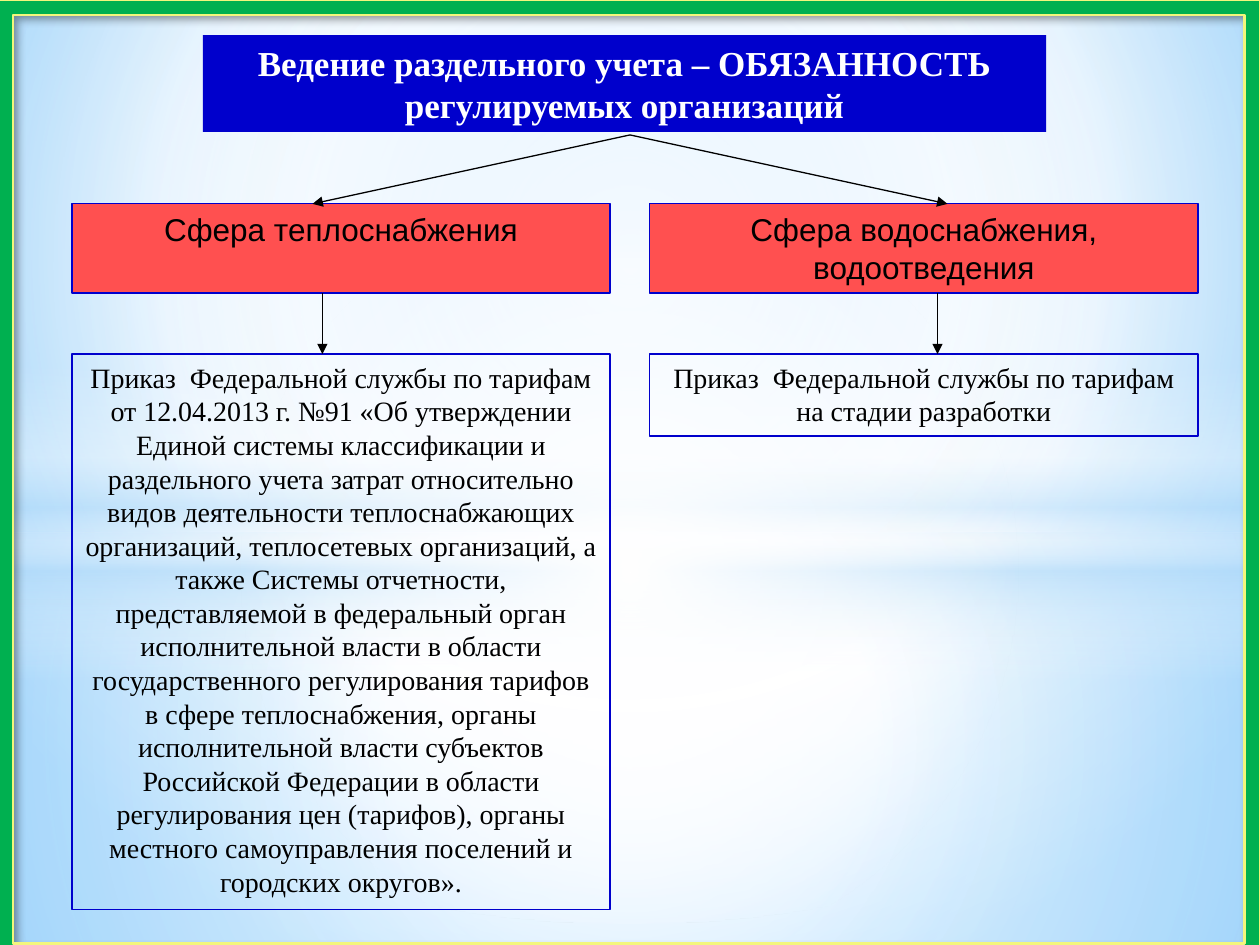
from lxml import etree
from pptx import Presentation
from pptx import util as u
from pptx.dml.color import RGBColor
from pptx.enum import shapes, text
from pptx.oxml import parse_xml
from pptx.oxml.ns import nsdecls, qn

COLORS = {
    "sky": "B4DCFA", "white": "FFFFFF", "black": "000000",
    "pale_blue": "9ED5FF", "deep_blue": "5BB9FF",
    "green": "00B050", "yellow": "F3F67C", "blue": "0000CC", "red": "FF5050",
}
SERIF, SANS = "Times New Roman", "Arial"
WIDTH, HEIGHT = 25.4, 19.05
CENTER = (50, 50, 50, 50)

HEAT_ORDER = (
    "Приказ  Федеральной службы по тарифам от 12.04.2013 г. №91 «Об утверждении "
    "Единой системы классификации и раздельного учета затрат относительно видов "
    "деятельности теплоснабжающих организаций, теплосетевых организаций, а также "
    "Системы отчетности, представляемой в федеральный орган исполнительной власти "
    "в области государственного регулирования тарифов в сфере теплоснабжения, "
    "органы исполнительной власти субъектов Российской Федерации в области "
    "регулирования цен (тарифов), органы местного самоуправления поселений и "
    "городских округов»."
)
WATER_ORDER = "Приказ  Федеральной службы по тарифам\nна стадии разработки"


def rgb(name):
    return RGBColor.from_string(COLORS[name])


def set_gradient(owner, fill, stops, focus=None):
    """Stops are (position, colour, opacity) in percent; no focus means top to bottom."""
    fill.gradient()
    gradient = next(owner.element.iter(qn("a:gradFill")))
    marks = "".join(
        f'<a:gs pos="{place * 1000}"><a:srgbClr val="{COLORS[color]}">'
        f'<a:alpha val="{opacity * 1000}"/></a:srgbClr></a:gs>'
        for place, color, opacity in stops)
    if focus:
        sides = " ".join(f'{side}="{value * 1000}"' for side, value in zip("ltrb", focus))
        shade = f'<a:path path="circle"><a:fillToRect {sides}/></a:path>'
    else:
        shade = '<a:lin ang="5400000" scaled="0"/>'
    gradient.getparent().replace(gradient, parse_xml(
        f'<a:gradFill {nsdecls("a")} rotWithShape="1">'
        f'<a:gsLst>{marks}</a:gsLst>{shade}</a:gradFill>'))


def add_box(page, area, fill=None, line=None, kind=shapes.MSO_SHAPE.RECTANGLE, weight=0.75):
    box = page.shapes.add_shape(kind, *(u.Cm(length) for length in area))
    box.shadow.inherit = False
    if fill:
        box.fill.solid()
        box.fill.fore_color.rgb = rgb(fill)
    else:
        box.fill.background()
    if line:
        box.line.color.rgb = rgb(line)
        box.line.width = u.Pt(weight)
    else:
        box.line.fill.background()
    return box


def write(box, words, size, font, color="black", bold=False):
    frame = box.text_frame
    frame.word_wrap = True
    frame.auto_size = text.MSO_AUTO_SIZE.SHAPE_TO_FIT_TEXT
    frame.vertical_anchor = text.MSO_ANCHOR.TOP
    frame.text = words
    for para in frame.paragraphs:
        para.alignment = text.PP_ALIGN.CENTER
        for span in para.runs:
            span.font.size = u.Pt(size)
            span.font.name = font
            span.font.bold = bold
            span.font.color.rgb = rgb(color)


def add_arrow(page, start, end):
    arrow = page.shapes.add_connector(
        shapes.MSO_CONNECTOR.STRAIGHT, *(u.Cm(length) for length in (*start, *end)))
    arrow.line.color.rgb = rgb("black")
    arrow.line.width = u.Pt(0.75)
    etree.SubElement(arrow.line._get_or_add_ln(), qn("a:tailEnd"), type="triangle")
    etree.SubElement(arrow.element.spPr, qn("a:effectLst"))


def add_backdrop(page):
    set_gradient(page, page.background.fill,
                 [(0, "pale_blue", 100), (60, "white", 100), (100, "deep_blue", 100)],
                 (20, 10, 20, 60))
    horizon = 10.74
    rectangle, oval = shapes.MSO_SHAPE.RECTANGLE, shapes.MSO_SHAPE.OVAL
    layers = [
        (rectangle, horizon, HEIGHT - horizon, CENTER,
         [(0, "white", 92), (37, "white", 77), (100, "sky", 80)]),
        (rectangle, 0, horizon, CENTER,
         [(0, "white", 90), (48, "white", 63), (100, "sky", 80)]),
        (rectangle, 7.37, 6.35, None,
         [(0, "white", 0), (29, "white", 30), (45, "sky", 40),
          (55, "white", 26), (65, "sky", 60), (100, "white", 0)]),
        (oval, 4.45, 14.17, CENTER, [(0, "white", 100), (54, "white", 0)]),
    ]
    for kind, top, height, focus, stops in layers:
        layer = add_box(page, (0, top, WIDTH, height), kind=kind)
        set_gradient(layer, layer.fill, stops, focus)


def add_border(page):
    border = add_box(page, (-0.05, 0, WIDTH + 0.05, 19.33), "green", "yellow",
                     shapes.MSO_SHAPE.FRAME, 1.25)
    border.adjustments[0] = 0.016
    effects = border.element.spPr.find(qn("a:effectLst"))
    effects.append(parse_xml(
        f'<a:outerShdw {nsdecls("a")} blurRad="{u.Pt(4)}" dist="{u.Pt(3)}" dir="2700000">'
        f'<a:srgbClr val="{COLORS["black"]}"><a:alpha val="40000"/></a:srgbClr>'
        '</a:outerShdw>'))


def add_title(page, area):
    box = add_box(page, area, "blue")
    write(box, "Ведение раздельного учета – ОБЯЗАННОСТЬ регулируемых организаций",
          20, SERIF, "white", True)


def add_sector(page, area, heading, order, arrow_x):
    """A red heading with an arrow down to the order that governs the sector."""
    left, top, width, height = area
    heading_height, order_offset = 1.8, 3.03
    order_box = add_box(
        page, (left, top + order_offset, width, height - order_offset), line="blue")
    write(order_box, order, 16, SERIF)
    heading_box = add_box(page, (left, top, width, heading_height), "red", "blue")
    write(heading_box, heading, 18, SANS)
    add_arrow(page, (arrow_x, top + heading_height), (arrow_x, top + order_offset))


def main():
    deck = Presentation()
    deck.slide_width, deck.slide_height = u.Cm(WIDTH), u.Cm(HEIGHT)
    page = deck.slides.add_slide(deck.slide_layouts[6])
    add_backdrop(page)
    add_border(page)
    add_title(page, (4.09, 0.71, 17, 1.95))

    middle, sector_top = WIDTH / 2, 4.11
    add_sector(page, (1.45, sector_top, 10.85, 14.23),
               "Сфера теплоснабжения", HEAT_ORDER, middle - 6.2)
    add_sector(page, (13.1, sector_top, 11.05, 4.68),
               "Сфера водоснабжения, водоотведения", WATER_ORDER, middle + 6.2)
    for reach in (-6.4, 6.4):
        add_arrow(page, (middle, 2.72), (middle + reach, sector_top))
    deck.save("out.pptx")


if __name__ == "__main__":
    main()
